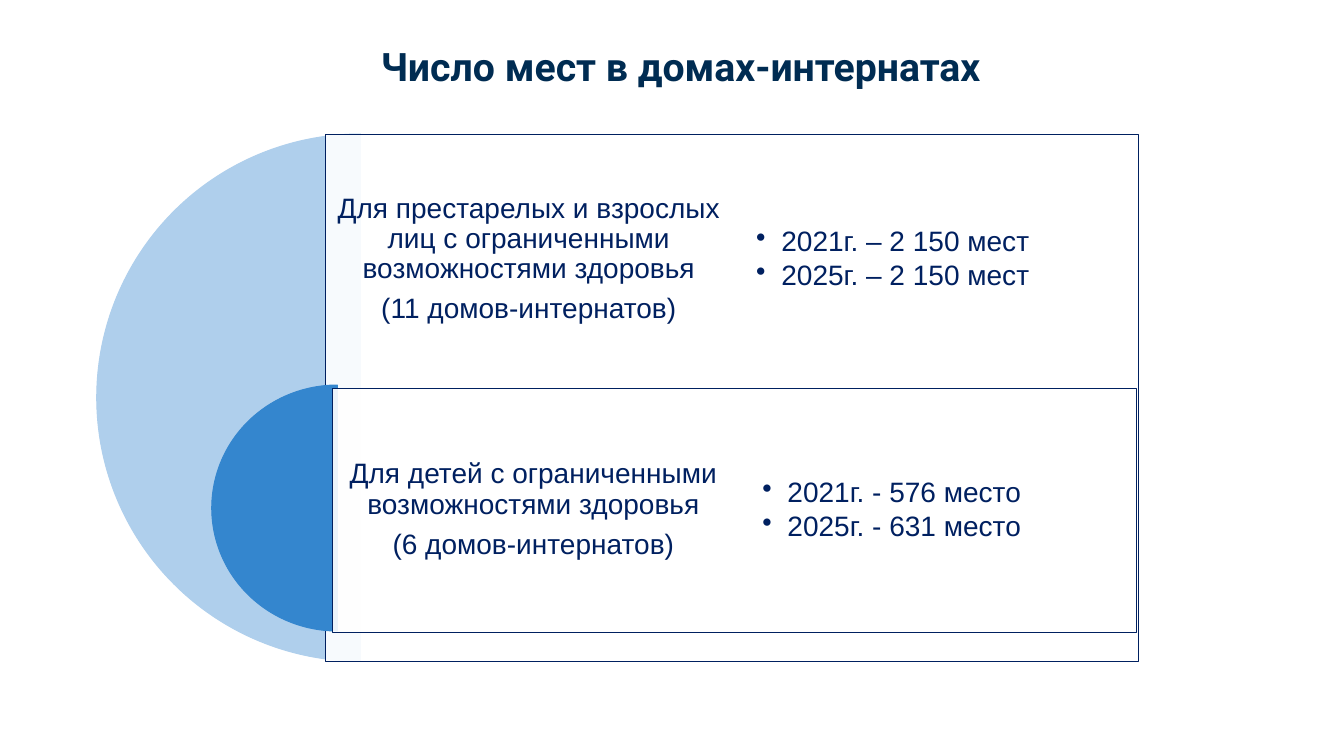
import dataclasses
import typing

import lxml.etree
import pptx
import pptx.dml.color
import pptx.enum.shapes
import pptx.enum.text
import pptx.oxml.ns
import pptx.shapes.autoshape
import pptx.slide
import pptx.util

Inches = pptx.util.Inches
Pt = pptx.util.Pt
Color = pptx.dml.color.RGBColor
Kind = pptx.enum.shapes.MSO_SHAPE
Align = pptx.enum.text.PP_ALIGN
Middle = pptx.enum.text.MSO_ANCHOR.MIDDLE
Rect = tuple[float, float, float, float]

NAVY = Color(0x00, 0x20, 0x60)
INK = Color(0x00, 0x2C, 0x52)
PALE = Color(0xAF, 0xCF, 0xEC)
BLUE = Color(0x34, 0x86, 0xCE)
WHITE = Color(0xFF, 0xFF, 0xFF)


@dataclasses.dataclass
class Band:
    pie: Rect
    tint: Color
    panel: Rect
    label: Rect
    words: list[str]
    list_box: Rect
    items: list[str]


BANDS = [
    Band(
        (0.96, 1.33, 5.23, 5.23), PALE,
        (3.23, 1.33, 8.06, 5.23),
        (3.23, 1.33, 4.03, 2.49),
        ["Для престарелых и взрослых лиц с ограниченными возможностями здоровья",
         "(11 домов-интернатов)"],
        (7.23, 1.33, 3.82, 2.49),
        ["2021г. – 2 150 мест", "2025г. – 2 150 мест"],
    ),
    Band(
        (2.1, 3.82, 2.49, 2.44), BLUE,
        (3.3, 3.85, 7.97, 2.42),
        (3.3, 3.85, 3.98, 2.42),
        ["Для детей с ограниченными возможностями здоровья",
         "(6 домов-интернатов)"],
        (7.29, 3.82, 3.71, 2.49),
        ["2021г. - 576 место", "2025г. - 631 место"],
    ),
]


def scale(rect: Rect) -> list[pptx.util.Length]:
    return [Inches(side) for side in rect]


def add_form(slide: pptx.slide.Slide, kind: Kind, rect: Rect, fill: Color,
             edge: Color, width: float) -> pptx.shapes.autoshape.Shape:
    form = slide.shapes.add_shape(kind, *scale(rect))
    form.shadow.inherit = False
    form.fill.solid()
    form.fill.fore_color.rgb = fill
    form.line.color.rgb = edge
    form.line.width = Pt(width)
    return form


def add_pie(slide: pptx.slide.Slide, rect: Rect, tint: Color) -> None:
    pie = add_form(slide, Kind.PIE, rect, tint, tint, 0.75)
    pie.adjustments[0] = 54
    pie.adjustments[1] = 162


def add_panel(slide: pptx.slide.Slide, rect: Rect) -> None:
    panel = add_form(slide, Kind.RECTANGLE, rect, WHITE, NAVY, 0.5)
    fill = panel._element.spPr.find(pptx.oxml.ns.qn("a:solidFill"))
    lxml.etree.SubElement(fill[0], pptx.oxml.ns.qn("a:alpha"), val="90000")


def add_bullet(para: typing.Any) -> None:
    para.level = 1
    props = para._p.get_or_add_pPr()
    props.set("marL", str(Inches(0.25)))
    props.set("indent", str(Inches(-0.25)))
    lxml.etree.SubElement(props, pptx.oxml.ns.qn("a:buChar"), char="•")


def add_text(slide: pptx.slide.Slide, rect: Rect, lines: list[str],
             inset: float, gap: float, listed: bool) -> None:
    frame = slide.shapes.add_textbox(*scale(rect)).text_frame
    frame.word_wrap = True
    frame.vertical_anchor = Middle
    frame.margin_left = frame.margin_right = Inches(inset)
    frame.margin_top = frame.margin_bottom = Inches(inset)
    frame.text = "\n".join(lines)
    for para in frame.paragraphs:
        if listed:
            add_bullet(para)
        para.alignment = Align.LEFT if listed else Align.CENTER
        para.line_spacing = 0.9
        para.space_after = Pt(gap)
        para.font.name = "Arial"
        para.font.size = Pt(20)
        para.font.color.rgb = NAVY


def set_title(slide: pptx.slide.Slide, text: str) -> None:
    title = slide.shapes.title
    title.left, title.top, title.width, title.height = scale((3.28, 0.21, 6.94, 0.94))
    frame = title.text_frame
    frame.text = text
    frame.vertical_anchor = Middle
    para = frame.paragraphs[0]
    para.alignment = Align.CENTER
    para.line_spacing = 0.9
    para.font.name = "Roboto"
    para.font.size = Pt(28)
    para.font.bold = True
    para.font.color.rgb = INK


def main() -> None:
    deck = pptx.Presentation()
    deck.slide_width = Inches(13.33)
    deck.slide_height = Inches(7.5)
    slide = deck.slides.add_slide(deck.slide_layouts[5])
    set_title(slide, "Число мест в домах-интернатах")
    for band in BANDS:
        add_pie(slide, band.pie, band.tint)
        add_panel(slide, band.panel)
        add_text(slide, band.label, band.words, 0.08, 7, False)
        add_text(slide, band.list_box, band.items, 0.27, 3, True)
    deck.save("out.pptx")


if __name__ == "__main__":
    main()
